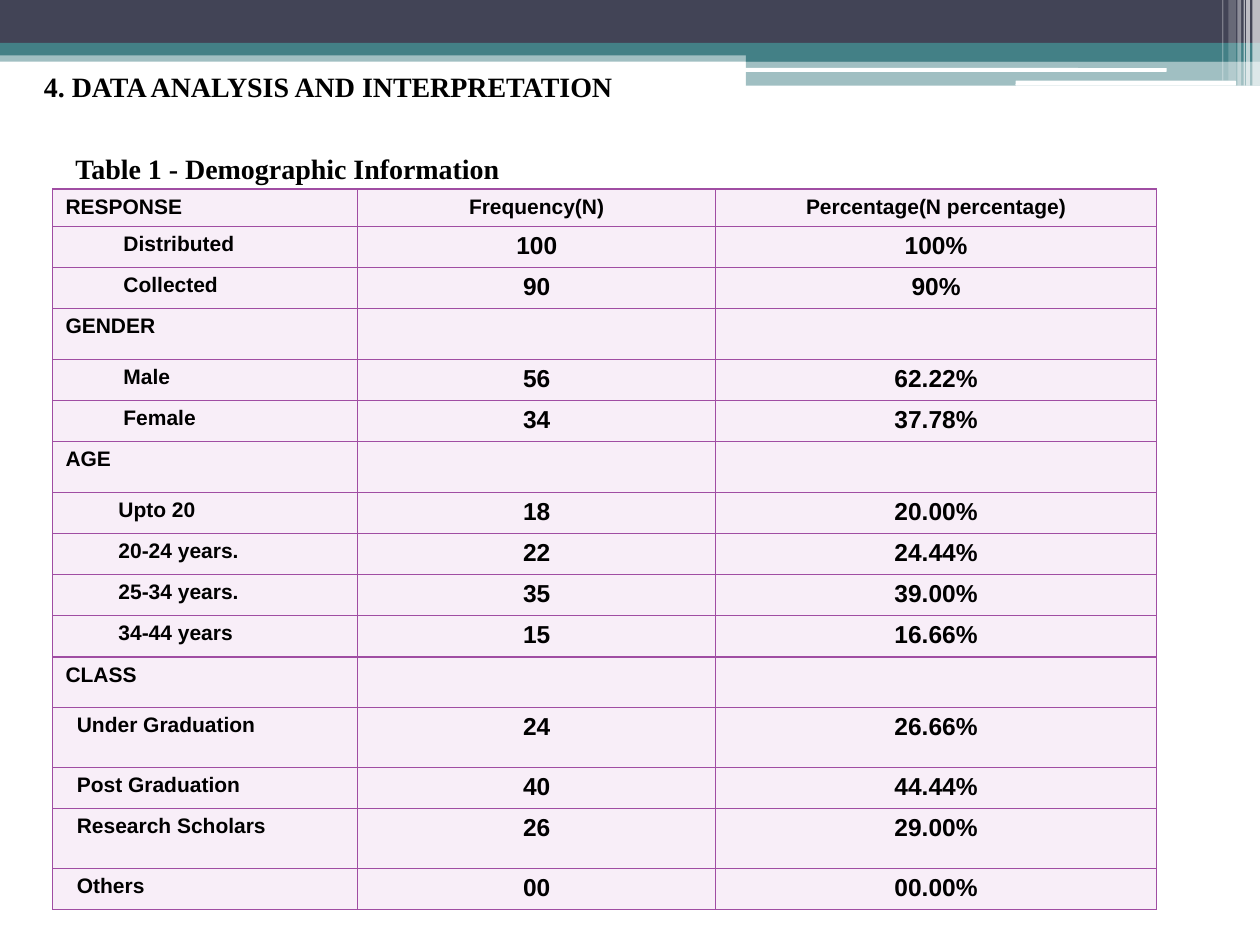
"""Build the demographic information slide with its banner and table."""
import pptx
import pptx.util
import pptx.dml.color
import pptx.enum.shapes
import pptx.enum.text
import pptx.oxml.ns
from lxml import etree

RGBColor = pptx.dml.color.RGBColor
TEAL = RGBColor(0x43, 0x80, 0x86)
SLATE = RGBColor(0x42, 0x44, 0x56)
WHITE = RGBColor(0xFF, 0xFF, 0xFF)
BLACK = RGBColor(0, 0, 0)
PURPLE = RGBColor(0xA0, 0x4D, 0xA3)
LILAC = RGBColor(0xF8, 0xEE, 0xF8)

SLIDE_WIDTH = pptx.util.Inches(10)
SLIDE_HEIGHT = pptx.util.Inches(7.5)
RECT = pptx.enum.shapes.MSO_SHAPE.RECTANGLE
ROUNDED = pptx.enum.shapes.MSO_SHAPE.ROUNDED_RECTANGLE
ALIGN = pptx.enum.text.PP_ALIGN

# Banner parts: left, top, width, height in percent, kind, colour, opacity.
BANNER = [
    (0, 5.33, 100, 1.2, RECT, TEAL, 50),
    (0, 0, 100, 4.53, RECT, SLATE, 100),
    (0, 4.53, 100, 1.33, RECT, TEAL, 100),
    (59.2, 5.2, 40.8, 1.33, RECT, TEAL, 100),
    (59.2, 6.4, 40.8, 2.67, RECT, TEAL, 50),
    (59.1, 7.2, 33.5, 0.4, ROUNDED, WHITE, 100),
    (80.6, 8.53, 17.5, 0.53, ROUNDED, WHITE, 100),
]
# Stripes: left, width, height in percent, opacity.
STRIPES = [
    (99.4, 0.6, 9.07, 65), (98.9, 0.3, 9.07, 65), (98.7, 0.1, 9.07, 60),
    (98.2, 0.3, 9.07, 40), (97.5, 0.6, 8.53, 20), (97, 0.1, 8.53, 30),
]

COLUMN_SHARES = (24.2, 28.4, 35)
HEADER, NORMAL, SECTION, TALL = 3.81, 4.34, 5.29, 6.35
DEEP, MIDDLE, SHALLOW = 0.46, 0.42, 0.09
# Table rows: height share, label indent in inches, cell texts.
ROWS = [
    (HEADER, 0, "RESPONSE", "Frequency(N)", "Percentage(N percentage)"),
    (NORMAL, DEEP, "Distributed", "100", "100%"),
    (NORMAL, DEEP, "Collected", "90", "90%"),
    (SECTION, 0, "GENDER", "", ""),
    (NORMAL, DEEP, "Male", "56", "62.22%"),
    (NORMAL, DEEP, "Female", "34", "37.78%"),
    (SECTION, 0, "AGE", "", ""),
    (NORMAL, MIDDLE, "Upto 20", "18", "20.00%"),
    (NORMAL, MIDDLE, "20-24 years.", "22", "24.44%"),
    (NORMAL, MIDDLE, "25-34 years.", "35", "39.00%"),
    (NORMAL, MIDDLE, "34-44 years", "15", "16.66%"),
    (SECTION, 0, "CLASS", "", ""),
    (TALL, SHALLOW, "Under Graduation", "24", "26.66%"),
    (NORMAL, SHALLOW, "Post Graduation", "40", "44.44%"),
    (TALL, SHALLOW, "Research Scholars", "26", "29.00%"),
    (NORMAL, SHALLOW, "Others", "00", "00.00%"),
]


def across(share):
    """Return a percentage of the slide width as a length."""
    return pptx.util.Emu(round(SLIDE_WIDTH * share / 100))


def down(share):
    """Return a percentage of the slide height as a length."""
    return pptx.util.Emu(round(SLIDE_HEIGHT * share / 100))


def add_band(slide, left, top, width, height, kind, color, opacity):
    """Add one plain filled banner part."""
    band = slide.shapes.add_shape(
        kind, across(left), down(top), across(width), down(height))
    band.shadow.inherit = False
    band.line.fill.background()
    band.fill.solid()
    band.fill.fore_color.rgb = color
    if opacity < 100:
        tint = band.fill._xPr.find(".//" + pptx.oxml.ns.qn("a:srgbClr"))
        etree.SubElement(tint, pptx.oxml.ns.qn("a:alpha"), val=str(opacity * 1000))


def write(paragraph, text, size, font, indent=0):
    """Add one bold black run to a paragraph, indented in inches."""
    run = paragraph.add_run()
    run.text = text
    run.font.size = pptx.util.Pt(size)
    run.font.name = font
    run.font.bold = True
    run.font.color.rgb = BLACK
    if indent:
        paragraph._p.get_or_add_pPr().set("marL", str(pptx.util.Inches(indent)))


def add_heading(slide):
    """Add the section heading and the table caption."""
    heading = slide.shapes.add_textbox(
        across(2.5), down(6.67), across(90), down(13)).text_frame
    heading.word_wrap = True
    write(heading.paragraphs[0], "4. DATA ANALYSIS AND INTERPRETATION",
          16, "Times New Roman")
    caption = heading.add_paragraph()
    caption.space_before = pptx.util.Pt(28)
    write(caption, "Table 1 - Demographic Information",
          16, "Times New Roman", 0.25)


def style_cell(cell):
    """Give a cell its thin border and pale fill."""
    properties = cell._tc.get_or_add_tcPr()
    for side in ("a:lnL", "a:lnR", "a:lnT", "a:lnB"):
        edge = etree.SubElement(properties, pptx.oxml.ns.qn(side),
                                w=str(pptx.util.Pt(0.75)))
        paint = etree.SubElement(edge, pptx.oxml.ns.qn("a:solidFill"))
        etree.SubElement(paint, pptx.oxml.ns.qn("a:srgbClr"), val=str(PURPLE))
    cell.fill.solid()
    cell.fill.fore_color.rgb = LILAC


def fill_cell(cell, text, size, alignment, indent):
    """Write the text of a cell."""
    cell.margin_top = pptx.util.Inches(0.06)
    cell.margin_bottom = pptx.util.Inches(0.05)
    paragraph = cell.text_frame.paragraphs[0]
    paragraph.alignment = alignment
    paragraph.line_spacing = 0.93
    write(paragraph, text, size, "Arial", indent)


def add_demographics(slide):
    """Add the table of responses by group."""
    table = slide.shapes.add_table(
        len(ROWS), len(COLUMN_SHARES), across(4.2), down(20),
        across(sum(COLUMN_SHARES)), down(sum(row[0] for row in ROWS))).table
    table.first_row = False
    table.horz_banding = False
    for column, share in zip(table.columns, COLUMN_SHARES):
        column.width = across(share)
    for row, (height, indent, *texts) in zip(table.rows, ROWS):
        row.height = down(height)
        for number, (cell, text) in enumerate(zip(row.cells, texts)):
            style_cell(cell)
            is_label = number == 0
            if text:
                fill_cell(cell, text,
                          12 if is_label or height == HEADER else 14,
                          ALIGN.JUSTIFY if is_label else ALIGN.CENTER,
                          indent if is_label else 0)


def main():
    """Build and save the slide."""
    deck = pptx.Presentation()
    deck.slide_width = SLIDE_WIDTH
    deck.slide_height = SLIDE_HEIGHT
    slide = deck.slides.add_slide(deck.slide_layouts[6])
    for part in BANNER:
        add_band(slide, *part)
    for left, width, height, opacity in STRIPES:
        add_band(slide, left, 0, width, height, RECT, WHITE, opacity)
    add_heading(slide)
    add_demographics(slide)
    deck.save("out.pptx")


if __name__ == "__main__":
    main()
